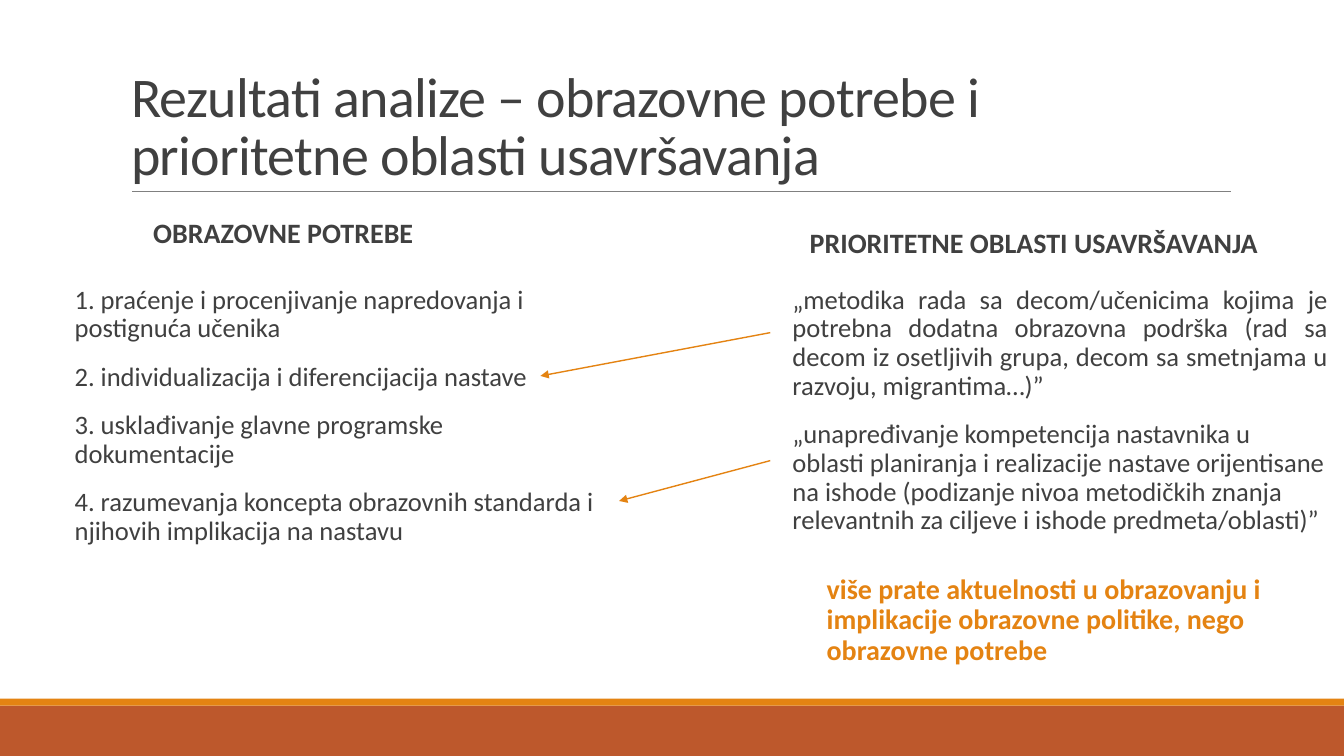
"""Build a slide that links educational needs to priority training areas."""
from lxml import etree
from pptx import Presentation
from pptx.dml.color import RGBColor
from pptx.enum.shapes import MSO_CONNECTOR, MSO_SHAPE
from pptx.enum.text import MSO_ANCHOR, MSO_AUTO_SIZE, PP_ALIGN
from pptx.oxml.ns import qn
from pptx.util import Inches, Pt

LINE, RECT = MSO_CONNECTOR.STRAIGHT, MSO_SHAPE.RECTANGLE
TOP, BOTTOM = MSO_ANCHOR.TOP, MSO_ANCHOR.BOTTOM
LEFT, JUST = PP_ALIGN.LEFT, PP_ALIGN.JUSTIFY
FIXED = MSO_AUTO_SIZE.NONE
DARK = RGBColor(0x40, 0x40, 0x40)
GRAY = RGBColor(0x80, 0x80, 0x80)
ORANGE = RGBColor(0xE4, 0x83, 0x12)
RUST = RGBColor(0xBD, 0x58, 0x2C)

deck = Presentation()
deck.slide_width, deck.slide_height = Inches(13.33), Inches(7.5)
COL, ROW = deck.slide_width / 100, deck.slide_height / 100
slide = deck.slides.add_slide(deck.slide_layouts[4])
shapes = slide.shapes


def grid(x, y, w, h):
    """Turn columns and rows, in hundredths of the slide, into lengths."""
    return int(x * COL), int(y * ROW), int(w * COL), int(h * ROW)


def write(shape, area, lines, size, color, bold, anchor):
    """Place a text shape and set its lines in one style."""
    shape.left, shape.top, shape.width, shape.height = grid(*area)
    frame = shape.text_frame
    frame.text = "\n".join(lines)
    frame.word_wrap = True
    frame.auto_size = FIXED
    frame.vertical_anchor = anchor
    for para in frame.paragraphs:
        para.alignment = LEFT
        for run in para.runs:
            font = run.font
            font.name, font.size, font.bold = "Calibri", Pt(size), bold
            font.color.rgb = color
    return frame


for y, h, color in [(93.33, 6.67, RUST), (92.4, 0.93, ORANGE)]:
    band = shapes.add_shape(RECT, *grid(0, y, 100, h))
    band.shadow.inherit = False
    band.fill.solid()
    band.fill.fore_color.rgb = color
    band.line.fill.background()

title = write(shapes.title, (9, 4.13, 82.5, 21.2),
              ["Rezultati analize – obrazovne potrebe i prioritetne oblasti usavršavanja"],
              40, DARK, False, BOTTOM)
title.paragraphs[0].line_spacing = 0.85
title.paragraphs[0].runs[0].font._element.set("spc", "-50")

needs = [
    "1. praćenje i procenjivanje napredovanja i postignuća učenika",
    "2. individualizacija i diferencijacija nastave",
    "3. usklađivanje glavne programske dokumentacije",
    "4. razumevanja koncepta obrazovnih standarda i njihovih implikacija na nastavu",
]
areas = [
    "„metodika rada sa decom/učenicima kojima je potrebna dodatna obrazovna podrška "
    "(rad sa decom iz osetlјivih grupa, decom sa smetnjama u razvoju, migrantima…)”",
    "„unapređivanje kompetencija nastavnika u oblasti planiranja i realizacije nastave "
    "orijentisane na ishode (podizanje nivoa metodičkih znanja relevantnih za cilјeve "
    "i ishode predmeta/oblasti)”",
]
note = ["više prate aktuelnosti u obrazovanju i implikacije obrazovne politike, "
        "nego obrazovne potrebe"]
holds = slide.placeholders
box = shapes.add_textbox(0, 0, 0, 0)
blocks = [
    (holds[1], (10.65, 28.4, 39.6, 5.73), ["OBRAZOVNE POTREBE"], 20, DARK, True),
    (holds[2], (4.8, 37.2, 39.6, 39.2), needs, 19, DARK, False),
    (holds[3], (59.49, 29.6, 38.03, 13.6), ["PRIORITETNE OBLASTI USAVRŠAVANJA"], 20, DARK, True),
    (holds[4], (58.21, 37.2, 40.58, 38), areas, 19, DARK, False),
    (box, (60.76, 75.47, 38.03, 13.6), note, 20, ORANGE, True),
]
for block in blocks:
    frame = write(*block, TOP)
    frame.margin_left = frame.margin_right = 0
    for para in frame.paragraphs:
        para.line_spacing = 0.9
        para.space_before, para.space_after = Pt(12), Pt(2)
        props = para._p.get_or_add_pPr()
        props.set("marL", str(Inches(0.1)))
        props.set("indent", "0")
        etree.SubElement(props, qn("a:buNone"))
holds[4].text_frame.paragraphs[0].alignment = JUST

links = [
    (9.83, 25.33, 91.6, 25.33, GRAY, 0.5, False),
    (57.31, 44, 40.21, 49.73, ORANGE, 1, True),
    (57.31, 60.93, 46.06, 66.27, ORANGE, 1, True),
]
for x, y, to_x, to_y, color, width, arrow in links:
    link = shapes.add_connector(LINE, *grid(x, y, to_x, to_y))
    link.line.color.rgb = color
    link.line.width = Pt(width)
    props = link._element.spPr
    if arrow:
        etree.SubElement(props.find(qn("a:ln")), qn("a:tailEnd"), type="triangle")
    etree.SubElement(props, qn("a:effectLst"))

deck.save("out.pptx")
